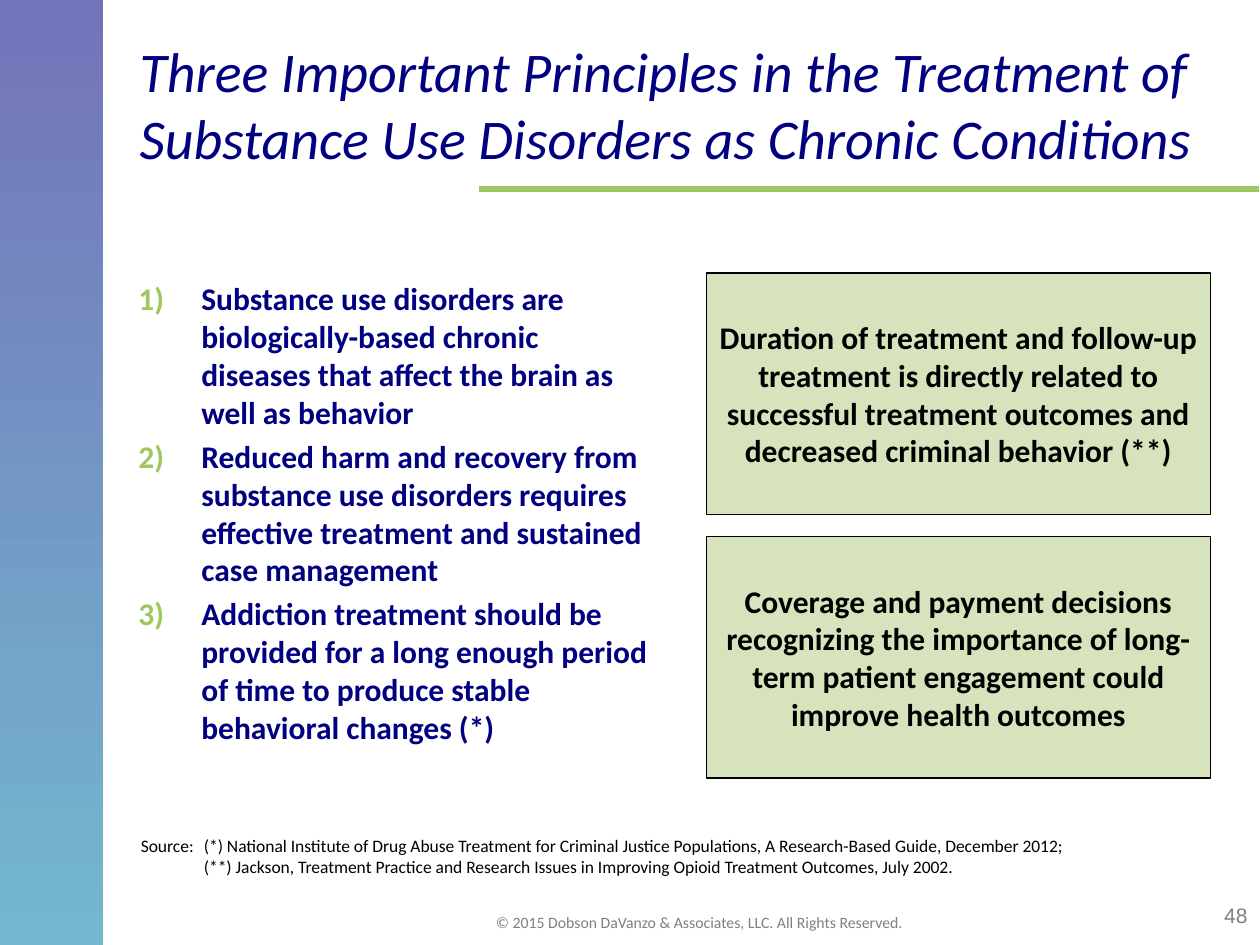
from pptx import Presentation
from pptx.dml.color import RGBColor
from pptx.enum.shapes import MSO_CONNECTOR, MSO_SHAPE
from pptx.enum.text import MSO_ANCHOR, PP_ALIGN
from pptx.oxml.ns import qn
from pptx.util import Pt
from lxml.etree import SubElement


def tint(code):
    return RGBColor.from_string(code)


def write(shape, lines, size, color, align=PP_ALIGN.LEFT, face="Calibri", bold=False):
    frame = shape.text_frame
    frame.word_wrap = True
    frame.text = "\n".join(lines)
    for para in frame.paragraphs:
        para.alignment = align
        para.font.name = face
        para.font.size = Pt(size)
        para.font.bold = bold
        para.font.color.rgb = tint(color)
    return frame


deck = Presentation()
deck.slide_width, deck.slide_height = Pt(720), Pt(540)
slide = deck.slides.add_slide(deck.slide_layouts[6])
shapes = slide.shapes

rule = shapes.add_connector(MSO_CONNECTOR.STRAIGHT, Pt(274), Pt(108), Pt(719.5), Pt(108))
rule.line.color.rgb = tint("9FC761")
rule.line.width = Pt(3)
SubElement(rule._element.spPr, qn("a:effectLst"))

band = shapes.add_shape(MSO_SHAPE.RECTANGLE, 0, 0, Pt(59), Pt(540))
band.shadow.inherit = False
band.line.fill.background()
band.fill.gradient()
band.fill.gradient_angle = 270
for stop, code in zip(band.fill.gradient_stops, ("7373B9", "73B8CF")):
    stop.color.rgb = tint(code)

page = shapes.add_textbox(Pt(642), Pt(512), Pt(78), Pt(22))
write(page, ["48"], 12, "808080", PP_ALIGN.RIGHT, "Arial")

foot = shapes.add_textbox(Pt(245.5), Pt(518.4), Pt(308), Pt(15))
frame = write(foot, ["© 2015 Dobson DaVanzo & Associates, LLC. All Rights Reserved."],
              9, "808080", PP_ALIGN.CENTER)
frame.margin_top = frame.margin_bottom = Pt(3)

title = shapes.add_textbox(Pt(72.7), Pt(5.8), Pt(618.5), Pt(106.5))
frame = write(title, ["Three Important Principles in the Treatment of "
                      "Substance Use Disorders as Chronic Conditions"], 32, "000080")
frame.vertical_anchor = MSO_ANCHOR.MIDDLE
frame.paragraphs[0].font.italic = True

points = [
    "Substance use disorders are biologically-based chronic diseases "
    "that affect the brain as well as behavior",
    "Reduced harm and recovery from substance use disorders requires "
    "effective treatment and sustained case management",
    "Addiction treatment should be provided for a long enough period "
    "of time to produce stable behavioral changes (*)",
]
body = shapes.add_textbox(Pt(72), Pt(156.2), Pt(305.3), Pt(324))
frame = body.text_frame
frame.text = "\n".join(points)
for rank, para in enumerate(frame.paragraphs):
    props = para._p.get_or_add_pPr()
    props.set("marL", str(Pt(36)))
    props.set("indent", str(-Pt(36)))
    color = SubElement(props, qn("a:buClr"))
    SubElement(color, qn("a:srgbClr"), val="9FC761")
    SubElement(props, qn("a:buFont"), typeface="+mj-lt")
    SubElement(props, qn("a:buAutoNum"), type="arabicParenR")
    para.space_before = Pt(3.6 if rank else 0)
    para.font.name = "Calibri"
    para.font.size = Pt(18)
    para.font.bold = True
    para.font.color.rgb = tint("000080")
frame.word_wrap = True

source = shapes.add_textbox(Pt(73.4), Pt(473.8), Pt(617.8), Pt(31.7))
write(source, [
    "Source: \t(*) National Institute of Drug Abuse Treatment for Criminal Justice "
    "Populations, A Research-Based Guide, December 2012;",
    "\t(**) Jackson, Treatment Practice and Research Issues in Improving Opioid "
    "Treatment Outcomes, July 2002.",
], 10, "000000")

claims = [
    "Duration of treatment and follow-up treatment is directly related to "
    "successful treatment outcomes and decreased criminal behavior (**)",
    "Coverage and payment decisions recognizing the importance of long-term "
    "patient engagement could improve health outcomes",
]
for rank, claim in enumerate(claims):
    box = shapes.add_shape(MSO_SHAPE.RECTANGLE, Pt(403.7), Pt(156 + 150.6 * rank),
                           Pt(288), Pt(138))
    box.shadow.inherit = False
    box.fill.solid()
    box.fill.fore_color.rgb = tint("D7E3BC")
    box.line.color.rgb = tint("000000")
    box.line.width = Pt(0.75)
    frame = write(box, [claim], 18, "000000", PP_ALIGN.CENTER, bold=True)
    frame.vertical_anchor = MSO_ANCHOR.MIDDLE

deck.save("out.pptx")
